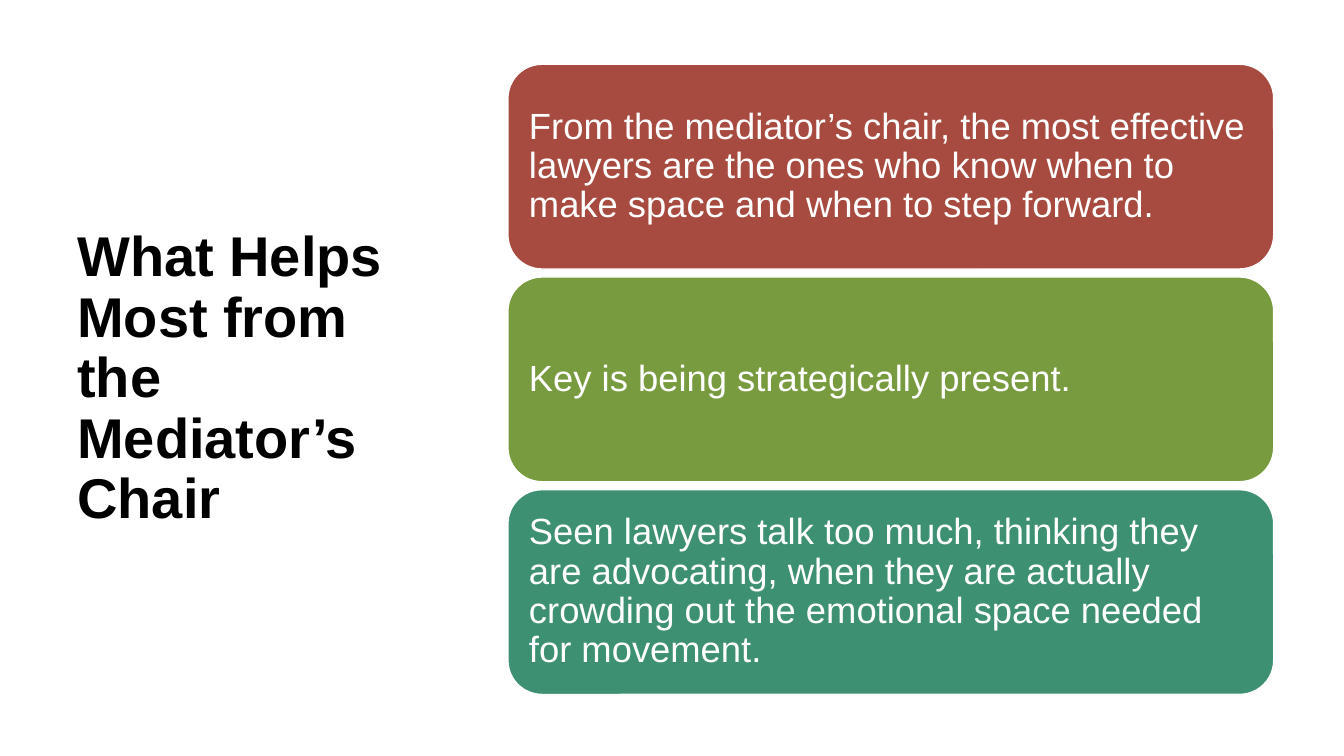
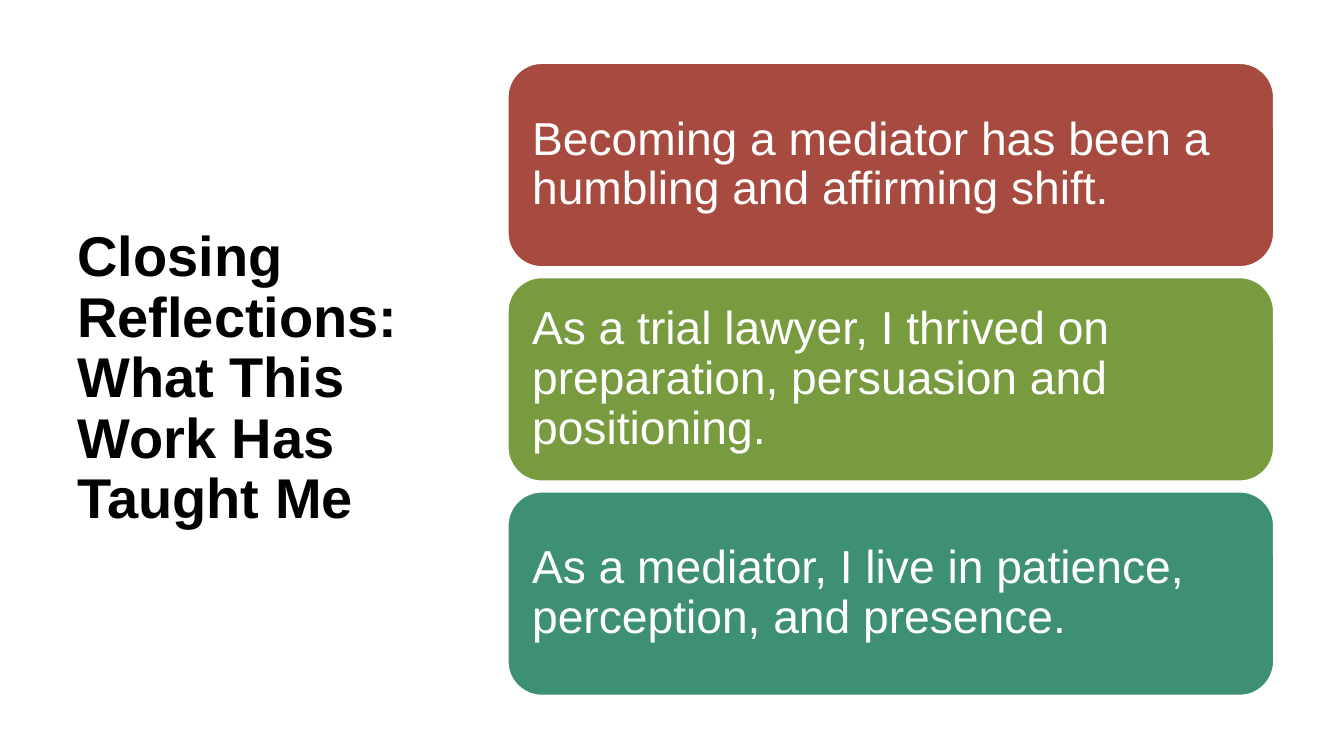
"""Build two slides, each with a bold title beside three coloured cards."""
from pptx import Presentation
from pptx.dml.color import RGBColor
from pptx.enum.shapes import MSO_SHAPE as SHAPE
from pptx.enum.text import MSO_ANCHOR as ANCHOR, MSO_AUTO_SIZE as AUTO, PP_ALIGN as ALIGN
from pptx.util import Cm, Pt

FONT = "Arial"
BLACK, WHITE = "000000", "FFFFFF"
CARD_COLORS = ["A74B40", "799B3F", "3D9072"]
CARD_LEFT, CARD_WIDTH, MIDDLE = 12.8, 19.3, 9.56

SLIDES = [
    {
        "title": "What Helps Most from the Mediator’s Chair",
        "size": 26, "inset": 0.28, "height": 5.16, "gap": 0.2,
        "cards": [
            "From the mediator’s chair, the most effective lawyers are the ones "
            "who know when to make space and when to step forward.",
            "Key is being strategically present.",
            "Seen lawyers talk too much, thinking they are advocating, when they are "
            "actually crowding out the emotional space needed for movement.",
        ],
    },
    {
        "title": "Closing Reflections: What This Work Has Taught Me",
        "size": 33, "inset": 0.36, "height": 5.13, "gap": 0.27,
        "cards": [
            "Becoming a mediator has been a humbling and affirming shift.",
            "As a trial lawyer, I thrived on preparation, persuasion and positioning.",
            "As a mediator, I live in patience, perception, and presence.",
        ],
    },
]


def rgb(color):
    return RGBColor.from_string(color)


def write(sp, text, size, color, bold=False, inset=0.25):
    tf = sp.text_frame
    tf.word_wrap = True
    tf.auto_size = AUTO.NONE
    tf.vertical_anchor = ANCHOR.MIDDLE
    tf.margin_left = tf.margin_right = tf.margin_top = tf.margin_bottom = Cm(inset)
    p = tf.paragraphs[0]
    p.alignment = ALIGN.LEFT
    p.line_spacing = 0.9
    r = p.add_run()
    r.text = text
    r.font.name = FONT
    r.font.size = Pt(size)
    r.font.bold = bold
    r.font.color.rgb = rgb(color)


prs = Presentation()
prs.slide_width, prs.slide_height = Cm(33.87), Cm(19.05)

for data in SLIDES:
    s = prs.slides.add_slide(prs.slide_layouts[5])
    title = s.shapes.title
    title.left, title.top, title.width, title.height = Cm(1.7), Cm(1.52), Cm(9.7), Cm(16.08)
    write(title, data["title"], 40, BLACK, bold=True)

    height = data["height"]
    pitch = height + data["gap"]
    first_top = MIDDLE - height / 2 - pitch
    for i, (text, color) in enumerate(zip(data["cards"], CARD_COLORS)):
        card = s.shapes.add_shape(SHAPE.ROUNDED_RECTANGLE, Cm(CARD_LEFT),
                                  Cm(first_top + i * pitch), Cm(CARD_WIDTH), Cm(height))
        card.shadow.inherit = False
        card.fill.solid()
        card.fill.fore_color.rgb = rgb(color)
        card.line.color.rgb = rgb(WHITE)
        card.line.width = Pt(1)
        write(card, text, data["size"], WHITE, inset=data["inset"])

prs.save("out.pptx")
